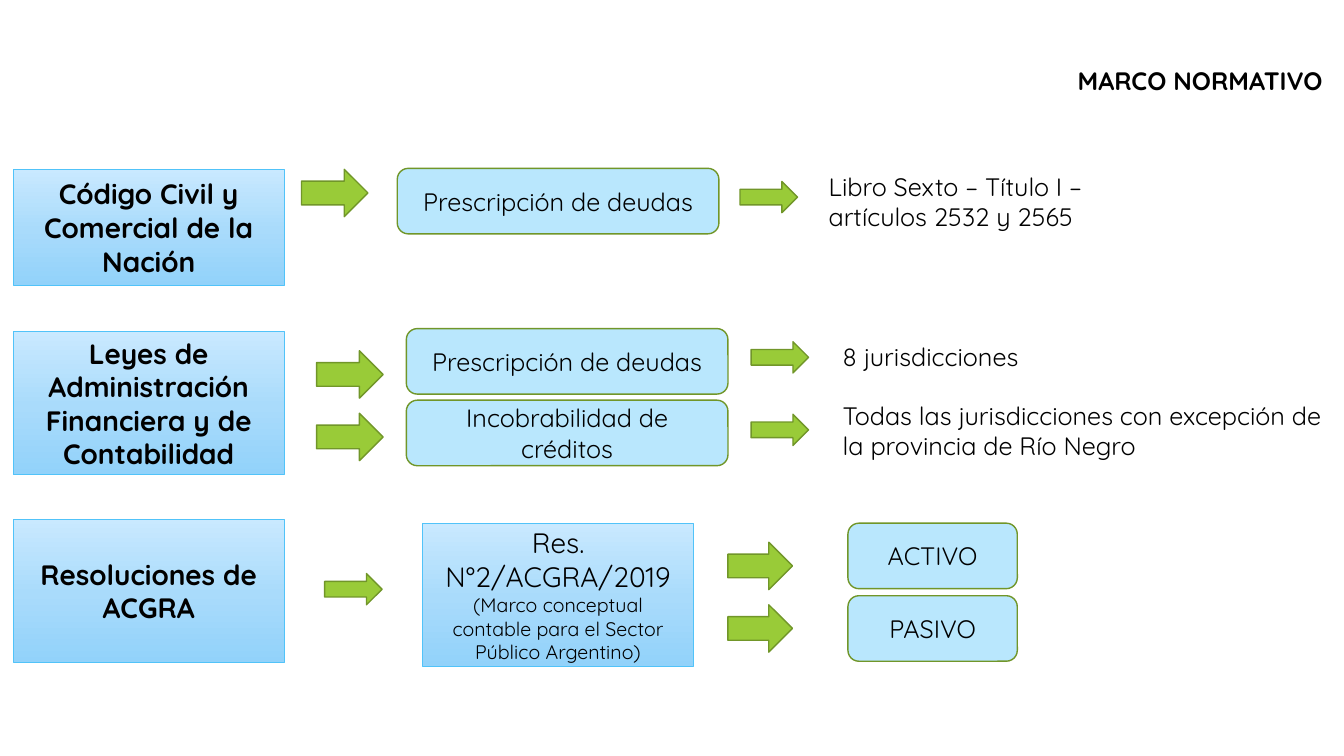
from copy import deepcopy
from dataclasses import dataclass

from pptx import Presentation
from pptx.dml.color import RGBColor
from pptx.enum.shapes import MSO_SHAPE
from pptx.enum.text import MSO_ANCHOR, PP_ALIGN
from pptx.oxml.ns import qn
from pptx.shapes.autoshape import Shape
from pptx.slide import Slide
from pptx.util import Inches, Pt

RECTANGLE = MSO_SHAPE.RECTANGLE
ROUNDED = MSO_SHAPE.ROUNDED_RECTANGLE
RIGHT_ARROW = MSO_SHAPE.RIGHT_ARROW
CENTER, LEFT = PP_ALIGN.CENTER, PP_ALIGN.LEFT
MIDDLE, TOP = MSO_ANCHOR.MIDDLE, MSO_ANCHOR.TOP

BLACK = RGBColor(0x00, 0x00, 0x00)
GREEN = RGBColor(0x99, 0xCB, 0x38)
DARK_GREEN = RGBColor(0x71, 0x96, 0x29)
PALE_BLUE = RGBColor(0xB9, 0xE7, 0xFD)
BORDER_BLUE = RGBColor(0x51, 0xC3, 0xF9)
GRADIENT = (
    (0, RGBColor(0xC9, 0xE9, 0xFF)),
    (0.52, RGBColor(0xA9, 0xDB, 0xFB)),
    (1, RGBColor(0x92, 0xD2, 0xFA)),
)
FONT = "Quicksand"


@dataclass(frozen=True)
class Area:
    left: float
    top: float
    width: float
    height: float

    def lengths(self) -> tuple:
        return tuple(Inches(n) for n in (self.left, self.top, self.width, self.height))


@dataclass(frozen=True)
class Label:
    text: str
    area: Area
    bold: bool = False


@dataclass(frozen=True)
class Source:
    lines: tuple[tuple[str, int], ...]
    area: Area
    bold: bool = True


# Sources of law, drawn with a gradient
SOURCES = (
    Source((("Código Civil y Comercial de la Nación", 20),), Area(0.13, 1.68, 2.69, 1.15)),
    Source((("Leyes de Administración Financiera y de Contabilidad", 20),),
           Area(0.13, 3.29, 2.69, 1.42)),
    Source((("Resoluciones de ACGRA", 20),), Area(0.13, 5.15, 2.69, 1.42)),
    Source((("Res. N°2/ACGRA/2019", 20),
            ("(Marco conceptual contable para el Sector Público Argentino)", 14)),
           Area(4.19, 5.19, 2.69, 1.42), bold=False),
)

# Topics in rounded boxes
TOPICS = (
    Label("Prescripción de deudas", Area(3.94, 1.67, 3.19, 0.65)),
    Label("Prescripción de deudas", Area(4.03, 3.26, 3.19, 0.65)),
    Label("Incobrabilidad de créditos", Area(4.03, 3.97, 3.19, 0.65)),
    Label("ACTIVO", Area(8.41, 5.19, 1.68, 0.65)),
    Label("PASIVO", Area(8.41, 5.91, 1.68, 0.65)),
)

# Title and plain text
TEXTS = (
    Label("MARCO NORMATIVO", Area(10.59, 0.6, 2.98, 0.4), bold=True),
    Label("Libro Sexto – Título I – artículos 2532 y 2565", Area(8.12, 1.65, 3.25, 0.71)),
    Label("8 jurisdicciones", Area(8.26, 3.34, 2.44, 0.4)),
    Label("Todas las jurisdicciones con excepción de la provincia de Río Negro",
          Area(8.26, 3.92, 5.07, 0.71)),
)

# Arrows: one size per group, then their left and top
ARROWS = (
    ((0.66, 0.47), ((2.99, 1.68), (3.14, 3.48), (3.14, 4.1))),
    ((0.64, 0.47), ((7.22, 5.38), (7.22, 6))),
    ((0.57, 0.31), ((7.34, 1.8), (7.45, 3.39), (7.45, 4.11), (3.22, 5.69))),
)


def write(box: Shape, *lines: tuple[str, int], bold: bool = False,
          align: PP_ALIGN = CENTER, anchor: MSO_ANCHOR = MIDDLE) -> None:
    frame = box.text_frame
    frame.word_wrap = True
    frame.vertical_anchor = anchor
    for index, (text, size) in enumerate(lines):
        para = frame.add_paragraph() if index else frame.paragraphs[0]
        para.alignment = align
        span = para.add_run()
        span.text = text
        span.font.name = FONT
        span.font.size = Pt(size)
        span.font.bold = bold
        span.font.color.rgb = BLACK


def add_outlined(slide: Slide, kind: MSO_SHAPE, area: Area,
                 border: RGBColor, weight: float) -> Shape:
    shape = slide.shapes.add_shape(kind, *area.lengths())
    shape.shadow.inherit = False
    shape.line.color.rgb = border
    shape.line.width = Pt(weight)
    return shape


def add_solid(slide: Slide, kind: MSO_SHAPE, area: Area, color: RGBColor) -> Shape:
    shape = add_outlined(slide, kind, area, DARK_GREEN, 1)
    shape.fill.solid()
    shape.fill.fore_color.rgb = color
    return shape


def add_source(slide: Slide, source: Source) -> None:
    box = add_outlined(slide, RECTANGLE, source.area, BORDER_BLUE, 0.75)
    box.fill.gradient()
    box.fill.gradient_angle = 270
    # A new gradient has two stops; the third is added in XML
    stop_list = next(box._element.spPr.iter(qn("a:gsLst")))
    stop_list.append(deepcopy(stop_list[-1]))
    for stop, (position, color) in zip(box.fill.gradient_stops, GRADIENT):
        stop.position = position
        stop.color.rgb = color
    write(box, *source.lines, bold=source.bold)


def add_text(slide: Slide, label: Label) -> None:
    box = slide.shapes.add_textbox(*label.area.lengths())
    write(box, (label.text, 18), bold=label.bold, align=LEFT, anchor=TOP)


def main() -> None:
    deck = Presentation()
    deck.slide_width, deck.slide_height = Inches(13.33), Inches(7.5)
    slide = deck.slides.add_slide(deck.slide_layouts[6])
    for source in SOURCES:
        add_source(slide, source)
    for topic in TOPICS:
        write(add_solid(slide, ROUNDED, topic.area, PALE_BLUE), (topic.text, 18))
    for size, corners in ARROWS:
        for corner in corners:
            add_solid(slide, RIGHT_ARROW, Area(*corner, *size), GREEN)
    for label in TEXTS:
        add_text(slide, label)
    deck.save("out.pptx")


if __name__ == "__main__":
    main()
